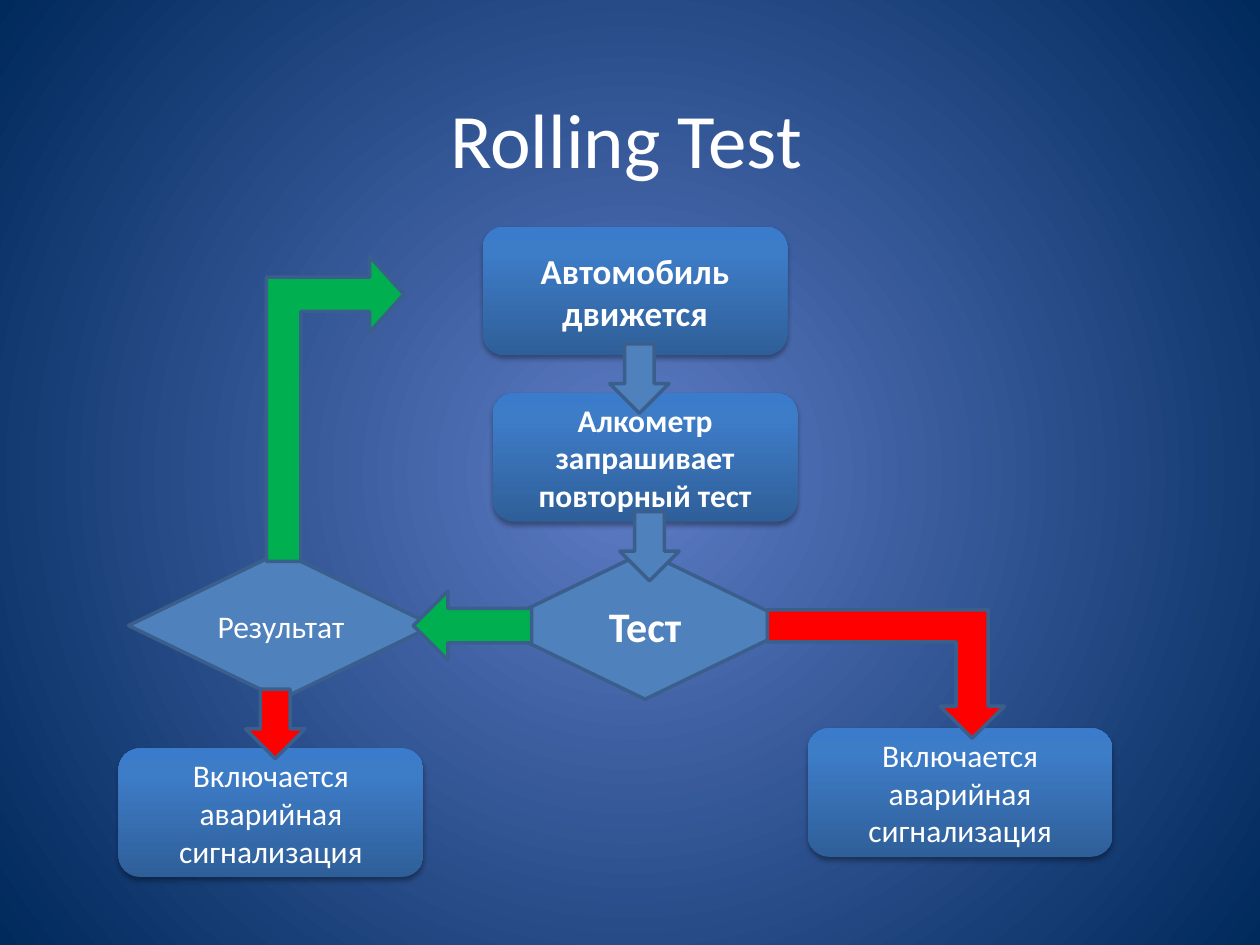
"""Build the Rolling Test flowchart slide."""
from dataclasses import dataclass
from typing import Optional

from lxml.etree import SubElement
from pptx import Presentation
from pptx.dml.color import RGBColor
from pptx.enum.shapes import MSO_SHAPE
from pptx.enum.text import MSO_ANCHOR, PP_ALIGN
from pptx.oxml.ns import qn
from pptx.util import Inches, Pt

COLORS = {
    "text": "FFFFFF", "blue": "4F81BD", "outline": "3A5F8C",
    "green": "00B050", "red": "FF0000", "shadow": "000000",
    "bg_center": "5E7CC5", "bg_edge": "00295C",
    "box_bottom": "2F5F99", "box_middle": "3D7CC7", "box_top": "3A7CCB",
}
FONT = "Calibri"
NODE_W = 2.42
BOX_H = 1.02
DECISION_H = 1.17


@dataclass
class Node:
    text: str
    left: float
    top: float
    size: int = 18
    bold: bool = False


@dataclass
class Arrow:
    kind: MSO_SHAPE
    left: float
    top: float
    width: float
    height: float
    color: str
    rotation: int = 0
    flip: Optional[str] = None
    adjustments: tuple = ()


BOXES = [
    Node("Автомобиль движется", 3.83, 1.8, 20, True),
    Node("Алкометр запрашивает повторный тест", 3.91, 3.12, 18, True),
    Node("Включается аварийная сигнализация", 0.94, 5.94),
    Node("Включается аварийная сигнализация", 6.41, 5.78),
]
TEST = Node("Тест", 3.91, 4.38, 24, True)
RESULT = Node("Результат", 1.02, 4.38)
ALARM_ARROW = Arrow(MSO_SHAPE.BENT_UP_ARROW, 6.09, 4.84, 1.88, 1.02, "red", 180, "flipH")
ARROWS = [
    Arrow(MSO_SHAPE.DOWN_ARROW, 4.84, 2.73, 0.47, 0.55, "blue"),
    Arrow(MSO_SHAPE.DOWN_ARROW, 1.95, 5.47, 0.47, 0.55, "red"),
    Arrow(MSO_SHAPE.DOWN_ARROW, 4.92, 4.06, 0.47, 0.55, "blue"),
    Arrow(MSO_SHAPE.LEFT_ARROW, 3.28, 4.69, 0.94, 0.55, "green"),
    Arrow(MSO_SHAPE.BENT_UP_ARROW, 1.45, 2.7, 2.42, 1.09, "green", 270, "flipV",
          (0.25, 0.276, 0.25)),
]


def rgb(name: str) -> RGBColor:
    return RGBColor.from_string(COLORS[name])


def add_color(parent, name: str):
    return SubElement(parent, qn("a:srgbClr"), val=COLORS[name])


def set_gradient(fill, props, stops: list, radial: bool = False) -> None:
    fill.gradient()
    grad = props.find(qn("a:gradFill"))
    for child in list(grad):
        grad.remove(child)
    stop_list = SubElement(grad, qn("a:gsLst"))
    for percent, name in stops:
        add_color(SubElement(stop_list, qn("a:gs"), pos=str(percent * 1000)), name)
    if radial:
        circle = SubElement(grad, qn("a:path"), path="circle")
        SubElement(circle, qn("a:fillToRect"), l="50000", t="50000", r="50000", b="50000")
    else:
        SubElement(grad, qn("a:lin"), ang="16200000", scaled="0")


def add_shadow(sp) -> None:
    effects = sp._element.spPr.find(qn("a:effectLst"))
    shadow = SubElement(effects, qn("a:outerShdw"), blurRad=str(Pt(3.1)),
                        dist=str(Pt(1.8)), dir="5400000", rotWithShape="0")
    SubElement(add_color(shadow, "shadow"), qn("a:alpha"), val="35000")


def write_text(tf, text: str, size: int, bold: bool = False) -> None:
    tf.word_wrap = True
    tf.vertical_anchor = MSO_ANCHOR.MIDDLE
    p = tf.paragraphs[0]
    p.alignment = PP_ALIGN.CENTER
    r = p.add_run()
    r.text = text
    r.font.name = FONT
    r.font.size = Pt(size)
    r.font.bold = bold
    r.font.color.rgb = rgb("text")


def add_shape(s, kind: MSO_SHAPE, left: float, top: float, width: float, height: float):
    sp = s.shapes.add_shape(kind, Inches(left), Inches(top), Inches(width), Inches(height))
    sp.shadow.inherit = False
    return sp


def paint(sp, color: str) -> None:
    sp.fill.solid()
    sp.fill.fore_color.rgb = rgb(color)
    sp.line.color.rgb = rgb("outline")
    sp.line.width = Pt(2)


def add_box(s, node: Node) -> None:
    sp = add_shape(s, MSO_SHAPE.ROUNDED_RECTANGLE, node.left, node.top, NODE_W, BOX_H)
    set_gradient(sp.fill, sp._element.spPr,
                 [(0, "box_bottom"), (80, "box_middle"), (100, "box_top")])
    sp.line.fill.background()
    add_shadow(sp)
    write_text(sp.text_frame, node.text, node.size, node.bold)


def add_decision(s, node: Node) -> None:
    sp = add_shape(s, MSO_SHAPE.FLOWCHART_DECISION, node.left, node.top, NODE_W, DECISION_H)
    paint(sp, "blue")
    write_text(sp.text_frame, node.text, node.size, node.bold)


def add_arrow(s, arrow: Arrow) -> None:
    sp = add_shape(s, arrow.kind, arrow.left, arrow.top, arrow.width, arrow.height)
    paint(sp, arrow.color)
    sp.rotation = arrow.rotation
    if arrow.flip:
        sp._element.spPr.xfrm.set(arrow.flip, "1")
    for i, value in enumerate(arrow.adjustments):
        sp.adjustments[i] = value


def main() -> None:
    prs = Presentation()
    prs.slide_width, prs.slide_height = Inches(10), Inches(7.5)
    s = prs.slides.add_slide(prs.slide_layouts[5])
    bg_fill = s.background.fill
    set_gradient(bg_fill, s._element.cSld.bg.bgPr,
                 [(0, "bg_center"), (100, "bg_edge")], radial=True)

    title = s.shapes.title
    title.left, title.top = Inches(0.47), Inches(0.47)
    title.width, title.height = Inches(9), Inches(1.25)
    write_text(title.text_frame, "Rolling Test", 44)

    for box in BOXES:
        add_box(s, box)
    add_decision(s, TEST)
    add_arrow(s, ALARM_ARROW)
    add_decision(s, RESULT)
    for arrow in ARROWS:
        add_arrow(s, arrow)
    prs.save("out.pptx")


if __name__ == "__main__":
    main()
